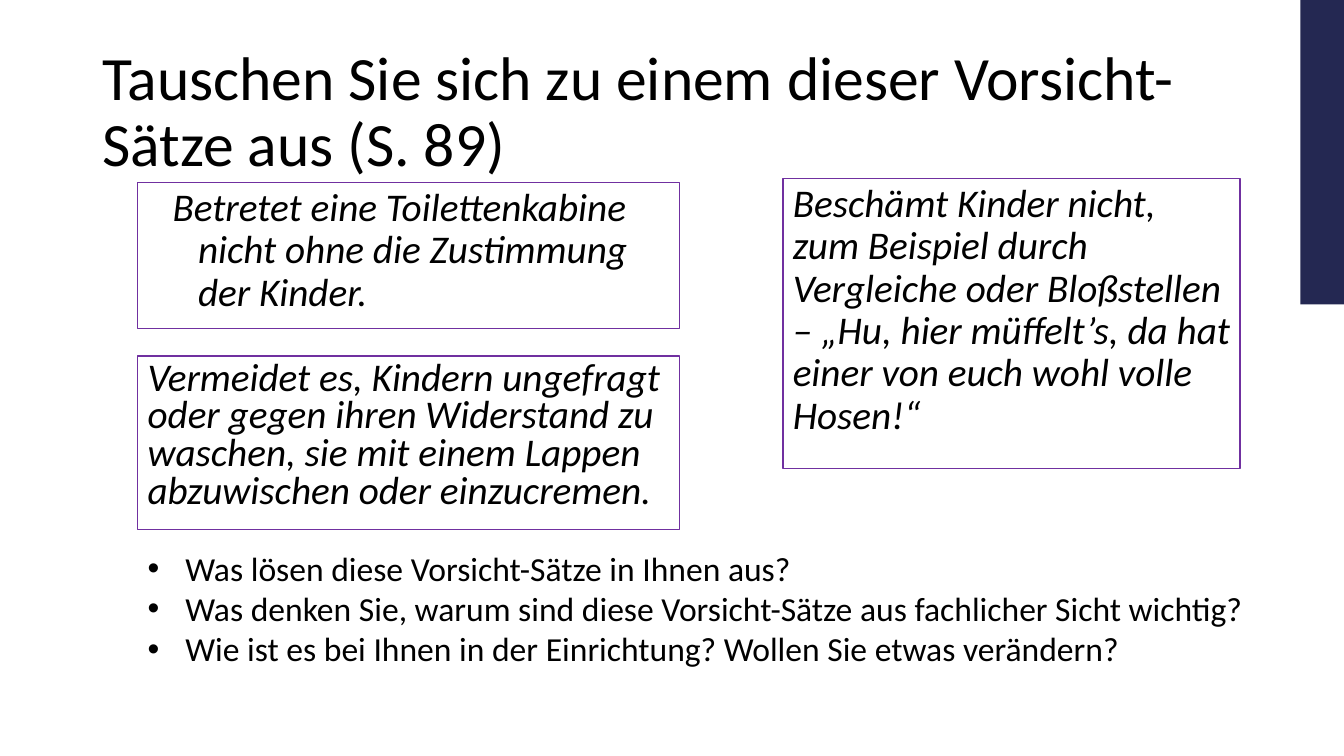
from lxml import etree
from pptx import Presentation
from pptx import util as u
from pptx.dml.color import RGBColor
from pptx.enum import shapes, text
from pptx.oxml.ns import qn


def tint(code):
    return RGBColor.from_string(code)


def write(box, lines, size=28, italic=False, space=1.0, left=0, first=0,
          bullet=None, anchor=text.MSO_ANCHOR.TOP):
    frame = box.text_frame
    frame.word_wrap = True
    frame.auto_size = text.MSO_AUTO_SIZE.NONE
    frame.vertical_anchor = anchor
    frame.margin_left = frame.margin_right = u.Cm(0.25)
    frame.margin_top = frame.margin_bottom = u.Cm(0.13)
    frame.text = "\n".join(lines)
    for para in frame.paragraphs:
        para.alignment = text.PP_ALIGN.LEFT
        para.line_spacing = space
        para.space_before = u.Pt(0)
        props = para._p.get_or_add_pPr()
        props.set("marL", str(u.Cm(left)))
        props.set("indent", str(u.Cm(first)))
        if bullet:
            etree.SubElement(props, qn("a:buFont")).set("typeface", "Arial")
            etree.SubElement(props, qn("a:buChar")).set("char", bullet)
        else:
            etree.SubElement(props, qn("a:buNone"))
        font = para.runs[0].font
        font.name = "Calibri"
        font.size = u.Pt(size)
        font.italic = italic
        font.color.rgb = tint("000000")


deck = Presentation()
deck.slide_width = u.Cm(33.87)
deck.slide_height = u.Cm(19.05)
slide = deck.slides.add_slide(deck.slide_layouts[1])
title, body = slide.placeholders

title.left, title.top, title.width, title.height = map(u.Cm, (2.33, 1.01, 30.77, 3.69))
write(title, ["Tauschen Sie sich zu einem dieser Vorsicht-Sätze aus (S. 89)"],
      size=44, space=0.9, anchor=text.MSO_ANCHOR.MIDDLE)

body.left, body.top, body.width, body.height = map(u.Cm, (3.47, 4.6, 13.65, 3.68))
write(body, ["Betretet eine Toilettenkabine nicht ohne die Zustimmung der Kinder."],
      italic=True, space=0.9, left=1.27, first=-0.64)

shame = slide.shapes.add_textbox(*map(u.Cm, (19.73, 4.5, 11.52, 7.3)))
write(shame, ["Beschämt Kinder nicht, zum Beispiel durch Vergleiche oder Bloßstellen "
              "– „Hu, hier müffelt’s, da hat einer von euch wohl volle Hosen!“"],
      italic=True, space=0.9)

wash = slide.shapes.add_textbox(*map(u.Cm, (3.47, 8.97, 13.65, 4.37)))
write(wash, ["Vermeidet es, Kindern ungefragt oder gegen ihren Widerstand zu waschen, "
             "sie mit einem Lappen abzuwischen oder einzucremen."],
      italic=True, space=0.8)

for card in (body, shame, wash):
    card.line.color.rgb = tint("7030A0")
    card.line.width = u.Pt(1)

bar = slide.shapes.add_shape(shapes.MSO_SHAPE.RECTANGLE, *map(u.Cm, (32.77, 0, 1.1, 7.67)))
bar.shadow.inherit = False
bar.fill.solid()
bar.fill.fore_color.rgb = tint("242852")
bar.line.fill.background()

tasks = slide.shapes.add_textbox(*map(u.Cm, (3.47, 13.67, 30.1, 3.33)))
write(tasks, [
    "Was lösen diese Vorsicht-Sätze in Ihnen aus?",
    "Was denken Sie, warum sind diese Vorsicht-Sätze aus fachlicher Sicht wichtig?",
    "Wie ist es bei Ihnen in der Einrichtung? Wollen Sie etwas verändern?",
], size=24, left=0.95, first=-0.95, bullet="•")

deck.save("out.pptx")
